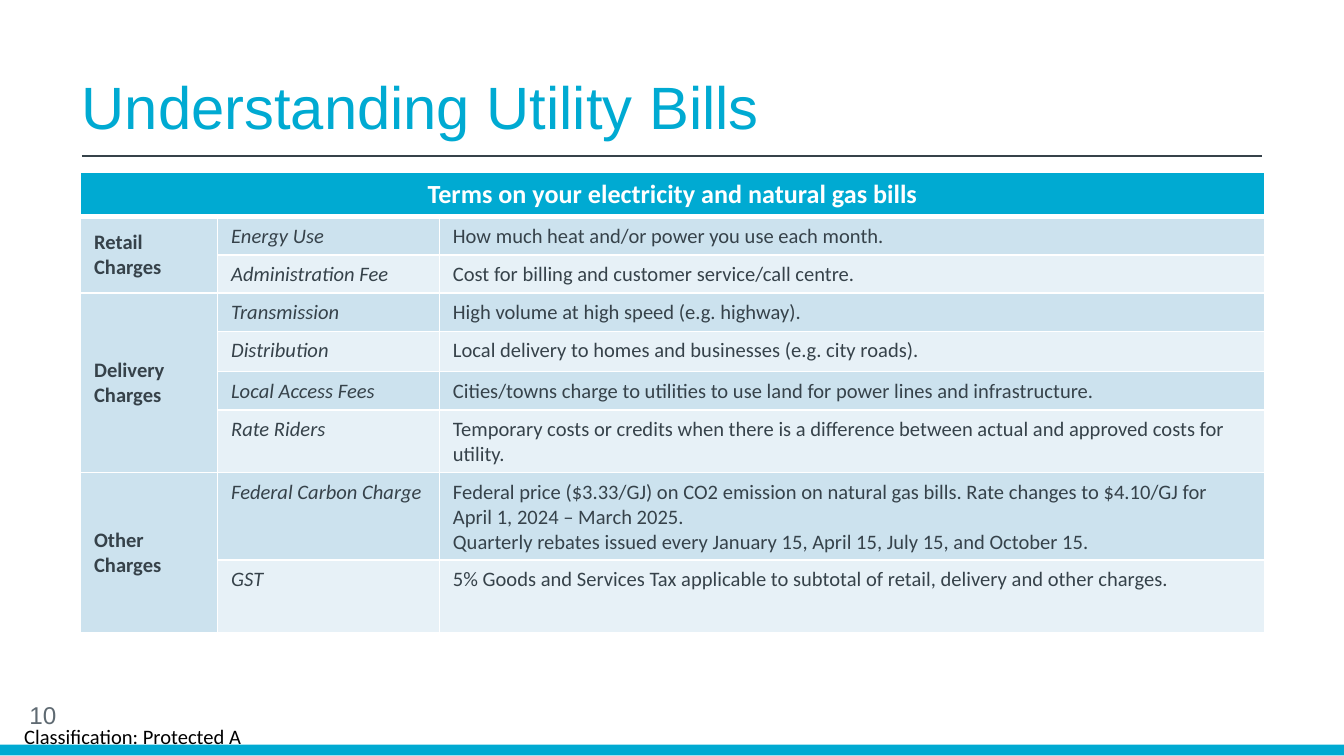
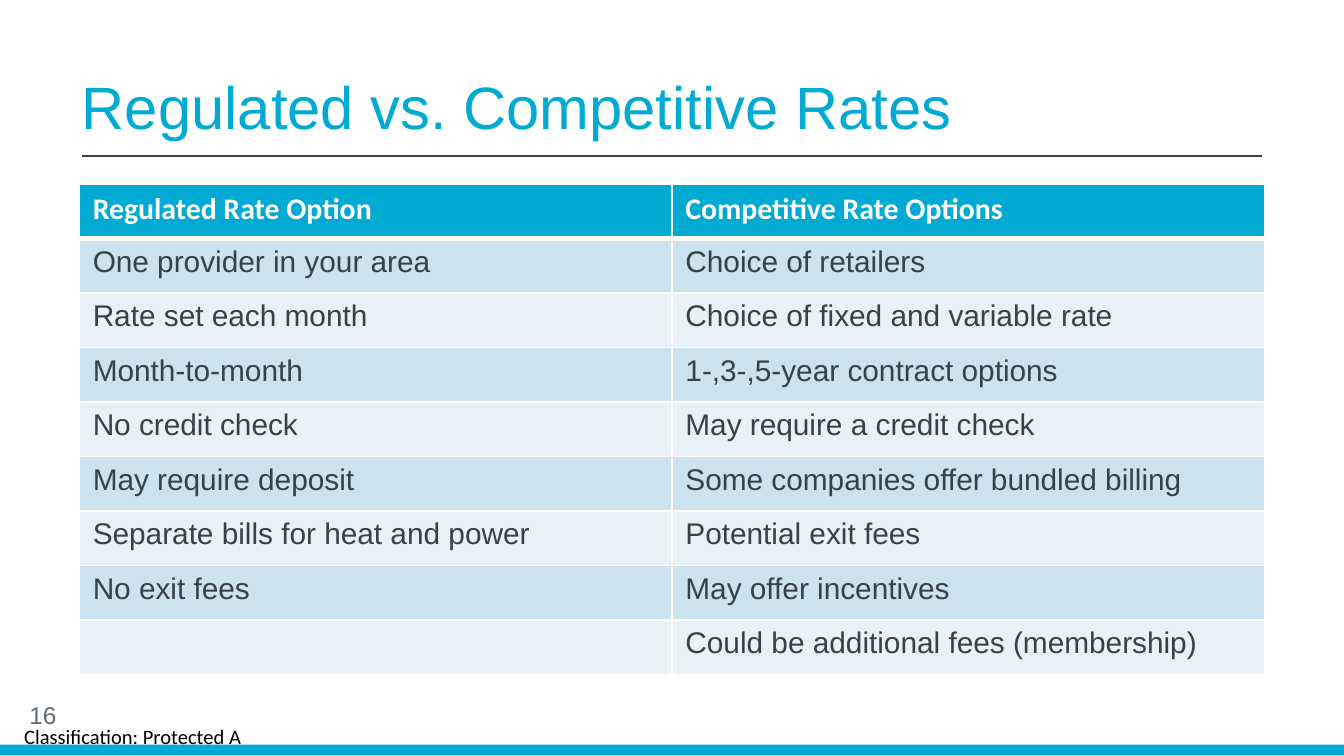
from dataclasses import dataclass

from lxml import etree
from pptx import Presentation
from pptx.dml.color import RGBColor
from pptx.enum.shapes import MSO_CONNECTOR, MSO_SHAPE
from pptx.enum.text import MSO_ANCHOR as Anchor, MSO_AUTO_SIZE as AutoSize, PP_ALIGN as Align
from pptx.oxml.ns import qn
from pptx.util import Inches, Pt

# Shared look
ACCENT, INK, GREY = "00AAD2", "36424A", "5F6A72"
WHITE, BLACK = "FFFFFF", "000000"
BANDS = ("E7F1F7", "CCE2EE")  # even rows, odd rows
HEAD, BODY = "Arial", "Calibri"


@dataclass(frozen=True)
class Style:
    size: float
    font: str
    color: str
    bold: bool = False
    italic: bool = False
    align: Align = Align.LEFT
    anchor: Anchor = Anchor.TOP


@dataclass(frozen=True)
class Span:
    row: int
    col: int
    rows: int
    cols: int


@dataclass(frozen=True)
class TableSpec:
    box: tuple[float, float, float, float]
    cols: list[float]
    rows: list[float]
    cells: list[tuple[str, ...]]
    header: Style
    columns: list[Style]
    spans: tuple[Span, ...] = ()


@dataclass(frozen=True)
class SlideSpec:
    title: str
    number: str
    table: TableSpec


TITLE = Style(32, HEAD, ACCENT, anchor=Anchor.BOTTOM)
NUMBER = Style(13, HEAD, GREY, anchor=Anchor.MIDDLE)
CLASSIFICATION = Style(11, BODY, BLACK, anchor=Anchor.MIDDLE)
RATE = Style(16, HEAD, INK)

BILL_TERMS = TableSpec(
    box=(0.6, 1.28, 8.81, 3.43),
    cols=[1.02, 1.65, 6.14],
    rows=[0.26, 0.24, 0.27, 0.22, 0.3, 0.19, 0.38, 0.54, 0.54],
    cells=[
        ("Terms on your electricity and natural gas bills", "", ""),
        ("Retail\nCharges", "Energy Use", "How much heat and/or power you use each month."),
        ("", "Administration Fee", "Cost for billing and customer service/call centre."),
        ("Delivery\nCharges", "Transmission", "High volume at high speed (e.g. highway)."),
        ("", "Distribution", "Local delivery to homes and businesses (e.g. city roads)."),
        ("", "Local Access Fees",
         "Cities/towns charge to utilities to use land for power lines and infrastructure."),
        ("", "Rate Riders",
         "Temporary costs or credits when there is a difference between actual and "
         "approved costs for utility."),
        ("Other Charges", "Federal Carbon Charge",
         "Federal price ($3.33/GJ) on CO2 emission on natural gas bills. Rate changes to "
         "$4.10/GJ for April 1, 2024 – March 2025.\n"
         "Quarterly rebates issued every January 15, April 15, July 15, and October 15."),
        ("", "GST",
         "5% Goods and Services Tax applicable to subtotal of retail, delivery and other charges."),
    ],
    header=Style(14, BODY, WHITE, bold=True, align=Align.CENTER),
    columns=[
        Style(11, BODY, INK, bold=True, anchor=Anchor.MIDDLE),
        Style(11, BODY, INK, italic=True),
        Style(11, BODY, INK),
    ],
    spans=(Span(0, 0, 1, 3), Span(1, 0, 2, 1), Span(3, 0, 4, 1), Span(7, 0, 2, 1)),
)

RATE_OPTIONS = TableSpec(
    box=(0.59, 1.37, 8.82, 3.65),
    cols=[8.82 / 2] * 2,
    rows=[3.65 / 9] * 9,
    cells=[
        ("Regulated Rate Option", "Competitive Rate Options"),
        ("One provider in your area", "Choice of retailers"),
        ("Rate set each month", "Choice of fixed and variable rate"),
        ("Month-to-month", "1-,3-,5-year contract options"),
        ("No credit check", "May require a credit check"),
        ("May require deposit", "Some companies offer bundled billing"),
        ("Separate bills for heat and power", "Potential exit fees"),
        ("No exit fees", "May offer incentives"),
        ("", "Could be additional fees (membership)"),
    ],
    header=Style(16, BODY, WHITE, bold=True),
    columns=[RATE, RATE],
)

SLIDES = [
    SlideSpec("Understanding Utility Bills", "10", BILL_TERMS),
    SlideSpec("Regulated vs. Competitive Rates", "16", RATE_OPTIONS),
]


def rgb(color: str) -> RGBColor:
    return RGBColor.from_string(color)


def write(tf, text: str, style: Style) -> None:
    """Fill a text frame, one paragraph for each line."""
    for i, line in enumerate(text.split("\n")):
        p = tf.add_paragraph() if i else tf.paragraphs[0]
        if line:
            p.add_run().text = line
        p.alignment = style.align
        f = p.font
        f.size, f.name, f.bold, f.italic = Pt(style.size), style.font, style.bold, style.italic
        f.color.rgb = rgb(style.color)


def add_text(slide, box: tuple[float, ...], text: str, style: Style):
    tf = slide.shapes.add_textbox(*map(Inches, box)).text_frame
    tf.word_wrap = True
    tf.vertical_anchor = style.anchor
    write(tf, text, style)
    return tf


def add_frame(slide) -> None:
    """Bottom band, classification and title rule."""
    band = slide.shapes.add_shape(
        MSO_SHAPE.RECTANGLE, *map(Inches, (0, 5.54, 10, 0.08)))
    band.shadow.inherit = False
    band.fill.solid()
    band.fill.fore_color.rgb = rgb(ACCENT)
    band.line.fill.background()

    tf = add_text(slide, (0, 5.32, 1.97, 0.31), "Classification: Protected A", CLASSIFICATION)
    tf.margin_right = tf.margin_top = tf.margin_bottom = 0
    tf.margin_left = Inches(0.18)
    tf.word_wrap = False
    tf.auto_size = AutoSize.SHAPE_TO_FIT_TEXT

    rule = slide.shapes.add_connector(
        MSO_CONNECTOR.STRAIGHT, *map(Inches, (0.61, 1.16, 9.39, 1.16)))
    rule.line.color.rgb = rgb(INK)
    rule.line.width = Pt(0.75)
    etree.SubElement(rule.element.spPr, qn("a:effectLst"))


def set_borders(cell, top: float, bottom: float) -> None:
    """White cell borders, placed ahead of the fill."""
    tc_pr = cell._tc.get_or_add_tcPr()
    widths = {"a:lnL": 1, "a:lnR": 1, "a:lnT": top, "a:lnB": bottom}
    for i, (tag, width) in enumerate(widths.items()):
        ln = etree.Element(qn(tag), w=str(Pt(width)))
        fill = etree.SubElement(ln, qn("a:solidFill"))
        etree.SubElement(fill, qn("a:srgbClr"), val=WHITE)
        tc_pr.insert(i, ln)


def add_table(slide, spec: TableSpec) -> None:
    frame = slide.shapes.add_table(
        len(spec.rows), len(spec.cols), *map(Inches, spec.box))
    table = frame.table
    table.first_row = table.horz_banding = False
    for column, width in zip(table.columns, spec.cols):
        column.width = Inches(width)
    for row, height in zip(table.rows, spec.rows):
        row.height = Inches(height)
    frame.height = Inches(spec.box[3])

    for r, texts in enumerate(spec.cells):
        for c, text in enumerate(texts):
            cell = table.cell(r, c)
            style = spec.columns[c] if r else spec.header
            write(cell.text_frame, text, style)
            cell.vertical_anchor = style.anchor
            cell.fill.solid()
            cell.fill.fore_color.rgb = rgb(BANDS[r % 2] if r else ACCENT)
            set_borders(cell, top=3 if r == 1 else 1, bottom=1 if r else 3)

    for s in spec.spans:
        last = table.cell(s.row + s.rows - 1, s.col + s.cols - 1)
        table.cell(s.row, s.col).merge(last)


def main() -> None:
    prs = Presentation()
    prs.slide_width = Inches(10)
    prs.slide_height = Inches(10 * 9 / 16)
    for spec in SLIDES:
        slide = prs.slides.add_slide(prs.slide_layouts[6])
        add_frame(slide)
        add_text(slide, (0.51, 0.48, 8.99, 0.62), spec.title, TITLE)
        add_text(slide, (0.12, 5.17, 2.25, 0.3), spec.number, NUMBER)
        add_table(slide, spec.table)
    prs.save("out.pptx")


if __name__ == "__main__":
    main()
